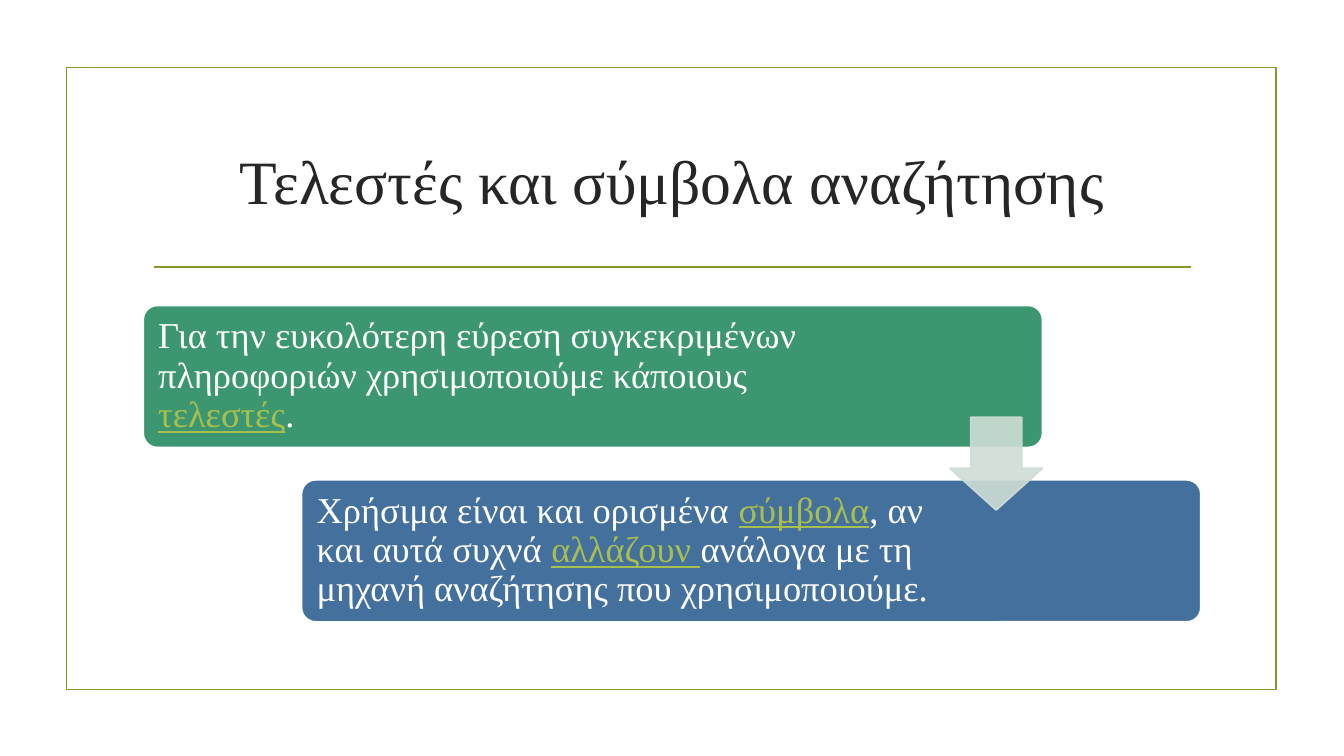
from lxml import etree
from pptx import Presentation
from pptx.dml.color import RGBColor
from pptx.enum.shapes import MSO_CONNECTOR, MSO_SHAPE
from pptx.enum.text import MSO_ANCHOR, PP_ALIGN
from pptx.oxml.ns import qn
from pptx.util import Emu, Pt

PX = 9144  # 100 px to the inch
FONT = "Times New Roman"
RECT = MSO_SHAPE.RECTANGLE
ROUNDED = MSO_SHAPE.ROUNDED_RECTANGLE
DOWN_ARROW = MSO_SHAPE.DOWN_ARROW
STRAIGHT = MSO_CONNECTOR.STRAIGHT
MIDDLE = MSO_ANCHOR.MIDDLE
LEFT, CENTER = PP_ALIGN.LEFT, PP_ALIGN.CENTER

COLORS = {
    "olive": "83992A",
    "title": "262626",
    "white": "FFFFFF",
    "link": "A8BF4D",
    "green": "3C9770",
    "blue": "44709D",
    "arrow": "CEDDD5",
}

STEP_SIZE = (892, 141)
STEPS = [
    {
        "at": (142, 303), "fill": "green", "text_width": 746,
        "runs": [
            ("Για την ευκολότερη εύρεση συγκεκριμένων πληροφοριών "
             "χρησιμοποιούμε κάποιους ", False),
            ("τελεστές", True),
            (".", False),
        ],
    },
    {
        "at": (299, 476), "fill": "blue", "text_width": 635,
        "runs": [
            ("Χρήσιμα είναι και ορισμένα ", False),
            ("σύμβολα", True),
            (", αν και αυτά συχνά ", False),
            ("αλλάζουν ", True),
            ("ανάλογα με τη μηχανή αναζήτησης που χρησιμοποιούμε.", False),
        ],
    },
]


def px(*lengths):
    return [Emu(length * PX) for length in lengths]


def rgb(name):
    return RGBColor.from_string(COLORS[name])


def add_box(slide, kind, box, line, fill=None, adjustments=()):
    shape = slide.shapes.add_shape(kind, *px(*box))
    shape.shadow.inherit = False
    if fill:
        shape.fill.solid()
        shape.fill.fore_color.rgb = rgb(fill)
    else:
        shape.fill.background()
    shape.line.color.rgb = rgb(line)
    shape.line.width = Pt(1.25)
    for index, value in enumerate(adjustments):
        shape.adjustments[index] = value
    return shape


def add_text(slide, box, runs, size, color, align=LEFT, inset=10, spacing=1.0):
    """Place one paragraph; runs are (text, is_link) pairs."""
    frame = slide.shapes.add_textbox(*px(*box)).text_frame
    frame.word_wrap = True
    frame.vertical_anchor = MIDDLE
    frame.margin_left, frame.margin_top, frame.margin_right, frame.margin_bottom = px(*[inset] * 4)
    paragraph = frame.paragraphs[0]
    paragraph.alignment = align
    paragraph.line_spacing = spacing
    for text, is_link in runs:
        run = paragraph.add_run()
        run.text = text
        run.font.name = FONT
        run.font.size = Pt(size)
        run.font.color.rgb = rgb("link" if is_link else color)
        run.font.underline = is_link


def add_frame(slide, box):
    add_box(slide, RECT, box, "olive")


def add_heading(slide, box):
    """Centred title with a rule below it."""
    left, top, width, height = box
    add_text(slide, box, [("Τελεστές και σύμβολα αναζήτησης", False)], 44, "title", CENTER)
    rule_y = top + height + 15
    rule = slide.shapes.add_connector(STRAIGHT, *px(left + 11, rule_y, left + width - 11, rule_y))
    rule.line.color.rgb = rgb("olive")
    rule.line.width = Pt(1.25)
    etree.SubElement(rule._element.spPr, qn("a:effectLst"))


def add_step(slide, box, fill, text_width, runs):
    left, top, _, height = box
    add_box(slide, ROUNDED, box, "white", fill, [0.1])
    text_box = (left + 4, top + 4, text_width, height - 8)
    add_text(slide, text_box, runs, 26, "white", inset=11, spacing=0.9)


def add_step_arrow(slide, box):
    arrow = add_box(slide, DOWN_ARROW, box, "arrow", "arrow", [0.55, 0.45])
    for color in arrow._element.spPr.iter(qn("a:srgbClr")):
        etree.SubElement(color, qn("a:alpha"), val="90000")


def main():
    presentation = Presentation()
    presentation.slide_width, presentation.slide_height = px(1333, 750)
    slide = presentation.slides.add_slide(presentation.slide_layouts[6])
    add_frame(slide, (66, 67, 1200, 617))
    add_heading(slide, (142, 107, 1050, 143))
    for step in STEPS:
        add_step(slide, step["at"] + STEP_SIZE, step["fill"], step["text_width"], step["runs"])
    add_step_arrow(slide, (942, 414, 92, 92))
    presentation.save("out.pptx")


if __name__ == "__main__":
    main()
